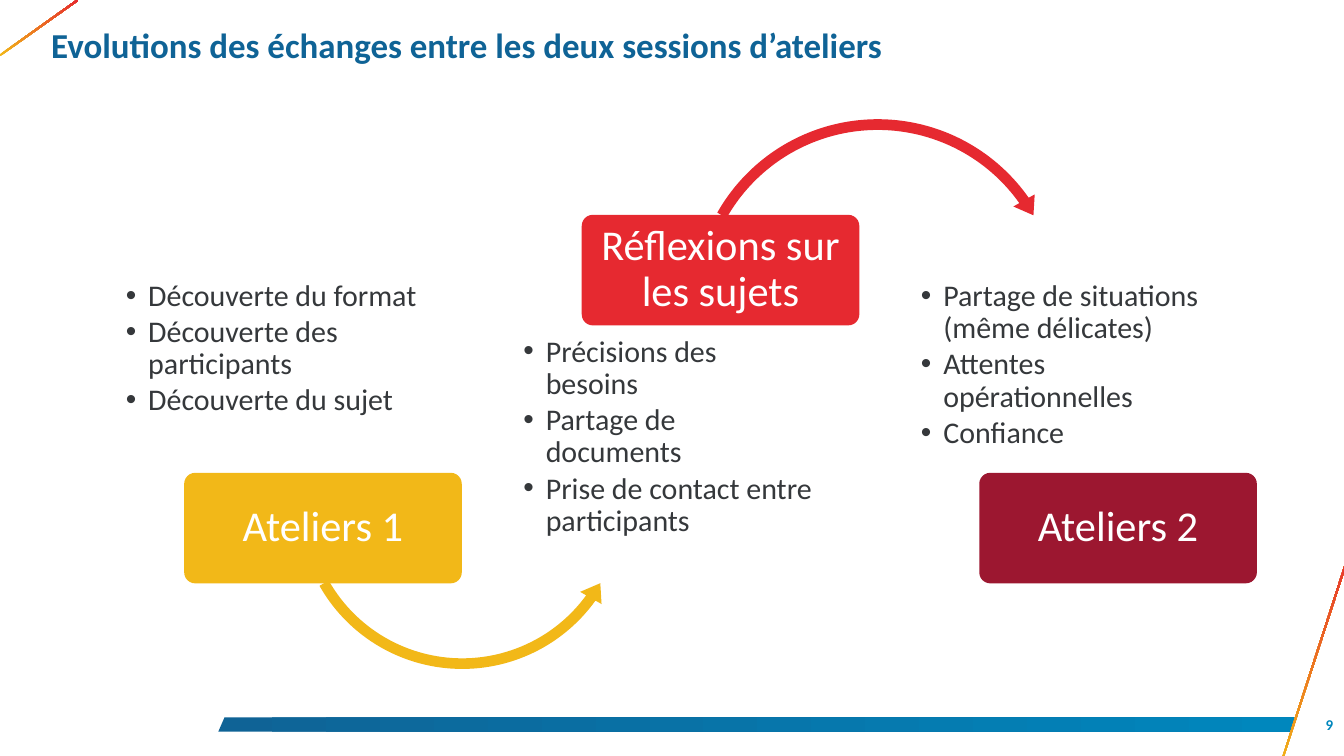
"""Build the slide on how exchanges evolved between the two workshop sessions."""
from dataclasses import dataclass

from lxml.etree import SubElement
from pptx import Presentation
from pptx.dml.color import RGBColor
from pptx.enum.shapes import MSO_SHAPE
from pptx.enum.text import MSO_ANCHOR, MSO_AUTO_SIZE, PP_ALIGN
from pptx.oxml.ns import qn
from pptx.util import Inches, Pt

TITLE = "Evolutions des échanges entre les deux sessions d’ateliers"
PAGE = "9"


@dataclass(frozen=True)
class Theme:
    font: str = "Calibri"
    navy: str = "0F6396"
    blue: str = "0087BD"
    yellow: str = "F2B818"
    red: str = "E62930"
    burgundy: str = "9C1730"
    text: str = "35383B"
    white: str = "FFFFFF"
    title_size: int = 28
    stage_size: int = 34
    list_size: int = 24
    page_size: int = 12


T = Theme()

STAGES = [
    ("Ateliers 1", T.yellow, 5.26, 3.07,
     ["Découverte du format", "Découverte des participants", "Découverte du sujet"]),
    ("Réflexions sur les sujets", T.red, 2.39, 3.69,
     ["Précisions des besoins", "Partage de documents",
      "Prise de contact entre participants"]),
    ("Ateliers 2", T.burgundy, 5.26, 3.07,
     ["Partage de situations (même délicates)", "Attentes opérationnelles", "Confiance"]),
]
STEP = 8.85 / 2
LIST_LEFT, LIST_W, LIST_H = 1.35, 3.35, 2.12
BOX_LEFT, BOX_W, BOX_H = 2.05, 3.09, 1.23

# Each arrow: preset, left, top, side, colour, (width %, head °, end °, start °, head width %)
ARROWS = [
    (MSO_SHAPE.LEFT_CIRCULAR_ARROW, 3.24, 3.71, 3.81, T.yellow,
     (3.1, 6.32, 35.92, 150.41, 3.6)),
    (MSO_SHAPE.CIRCULAR_ARROW, 7.64, 1.25, 4.26, T.red,
     (2.8, 5.62, 324.79, 209.59, 3.2)),
]
RULES = [(13.48, 7.31, 2.32, 288, 32), (-0.1, 0.3, 1.06, 324.6, 356)]
RULE_H = 0.02
BAND = [(2.5, 7.98), (14.43, 7.98), (14.37, 8.14), (2.43, 8.14)]


def rgb(color):
    return RGBColor.from_string(color)


def inches(*values):
    return [Inches(v) for v in values]


def plain(sp):
    sp.shadow.inherit = False
    sp.line.fill.background()


def gradient(sp, colors, angle):
    plain(sp)
    sp.fill.gradient()
    sp.fill.gradient_angle = angle
    for stop, color in zip(sp.fill.gradient_stops, colors):
        stop.color.rgb = rgb(color)


def solid(shapes, preset, box, color, adjustments):
    sp = shapes.add_shape(preset, *inches(*box))
    plain(sp)
    sp.fill.solid()
    sp.fill.fore_color.rgb = rgb(color)
    for i, value in enumerate(adjustments):
        sp.adjustments[i] = value
    return sp


def place(sp, box):
    sp.left, sp.top, sp.width, sp.height = inches(*box)


def frame(sp, anchor, inset_x, inset_y):
    tf = sp.text_frame
    tf.word_wrap = True
    tf.auto_size = MSO_AUTO_SIZE.NONE
    tf.vertical_anchor = anchor
    tf.margin_left = tf.margin_right = Inches(inset_x)
    tf.margin_top = tf.margin_bottom = Inches(inset_y)
    return tf


def write(p, text, size, color, align=PP_ALIGN.LEFT, bold=False, spacing=1.0):
    p.alignment = align
    p.line_spacing = spacing
    p.space_before = Pt(0)
    r = p.add_run()
    r.text = text
    r.font.name, r.font.size, r.font.bold = T.font, Pt(size), bold
    r.font.color.rgb = rgb(color)


def bullet(p):
    pPr = p._p.get_or_add_pPr()
    pPr.set("marL", str(Inches(0.25)))
    pPr.set("indent", str(-Inches(0.25)))
    SubElement(pPr, qn("a:buFont")).set("typeface", "Arial")
    SubElement(pPr, qn("a:buChar")).set("char", "•")


def add_list(sp, box, items):
    place(sp, box)
    tf = frame(sp, MSO_ANCHOR.TOP, 0.05, 0.05)
    for i, item in enumerate(items):
        p = tf.add_paragraph() if i else tf.paragraphs[0]
        bullet(p)
        p.space_after = Pt(3)
        write(p, item, T.list_size, T.text, spacing=0.9)


def add_decor(shapes):
    points = [tuple(inches(*point)) for point in BAND]
    builder = shapes.build_freeform(*points[0])
    builder.add_line_segments(points[1:], close=True)
    gradient(builder.convert_to_shape(), (T.navy, T.blue), 0)
    for left, top, width, rotation, angle in RULES:
        sp = shapes.add_shape(MSO_SHAPE.RECTANGLE, *inches(left, top, width, RULE_H))
        sp.rotation = rotation
        gradient(sp, (T.yellow, T.red), angle)


def main():
    prs = Presentation()
    prs.slide_width, prs.slide_height = inches(14.96, 8.41)
    s = prs.slides.add_slide(prs.slide_layouts.get_by_name("Comparison"))
    shapes = s.shapes
    title, *bodies = s.placeholders
    spare = bodies.pop()
    spare.element.getparent().remove(spare.element)

    add_decor(shapes)
    place(title, (0.53, 0.22, 13.9, 0.9))
    tf = frame(title, MSO_ANCHOR.TOP, 0.04, 0.04)
    write(tf.paragraphs[0], TITLE, T.title_size, T.navy, bold=True)

    for preset, left, top, side, color, (width, head, end, start, head_w) in ARROWS:
        angles = [angle * 0.6 for angle in (head, end, start)]
        solid(shapes, preset, (left, top, side, side), color,
              (width / 100, *angles, head_w / 100))

    for i, (name, color, box_top, list_top, items) in enumerate(STAGES):
        add_list(bodies[i], (LIST_LEFT + i * STEP, list_top, LIST_W, LIST_H), items)
        sp = solid(shapes, MSO_SHAPE.ROUNDED_RECTANGLE,
                   (BOX_LEFT + i * STEP, box_top, BOX_W, BOX_H), color, (0.1,))
        tf = frame(sp, MSO_ANCHOR.MIDDLE, 0.07, 0.05)
        write(tf.paragraphs[0], name, T.stage_size, T.white, PP_ALIGN.CENTER, spacing=0.9)

    page = shapes.add_textbox(*inches(14.27, 7.94, 0.57, 0.23))
    tf = frame(page, MSO_ANCHOR.MIDDLE, 0, 0)
    write(tf.paragraphs[0], PAGE, T.page_size, T.blue, PP_ALIGN.RIGHT, bold=True)
    prs.save("out.pptx")


if __name__ == "__main__":
    main()
